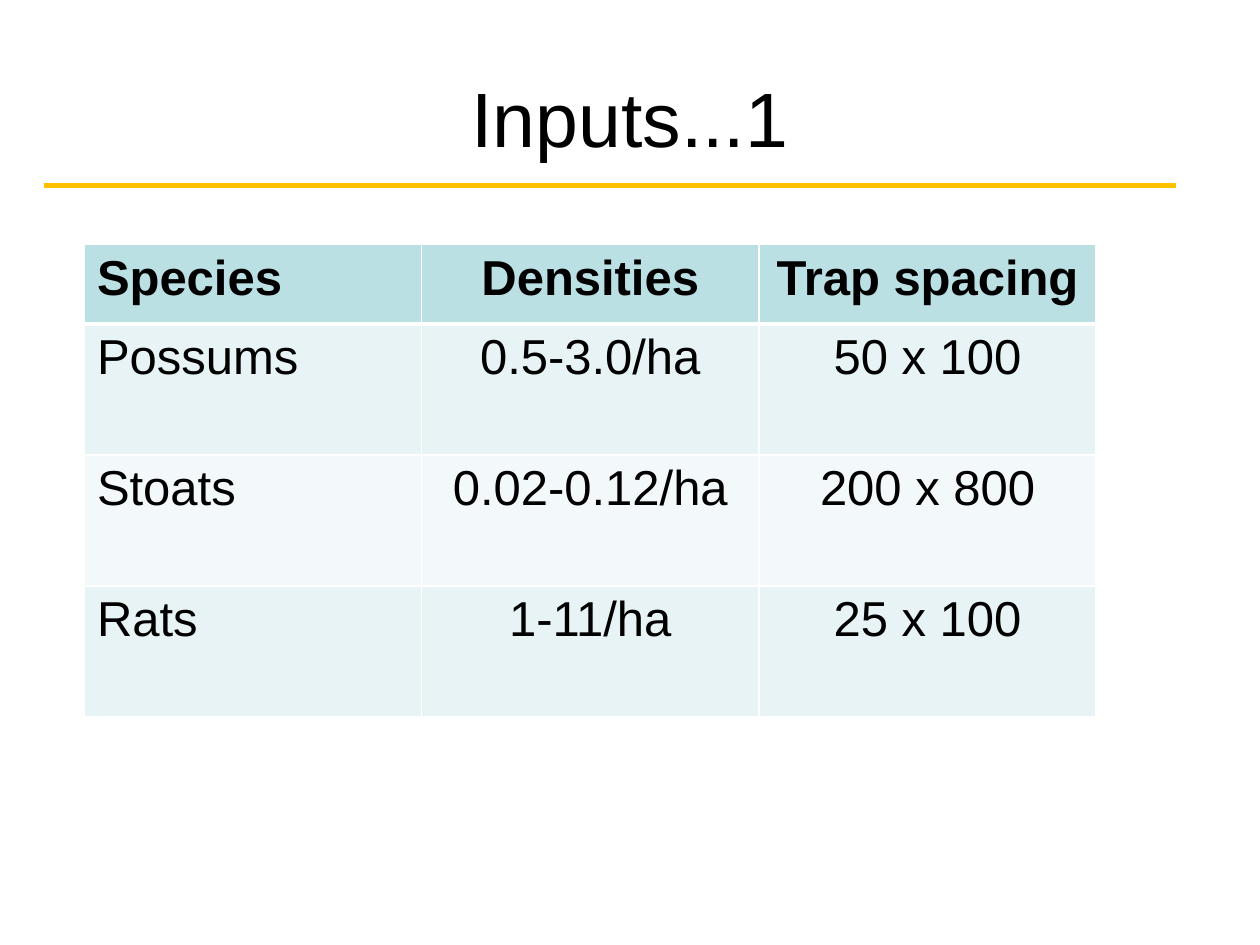
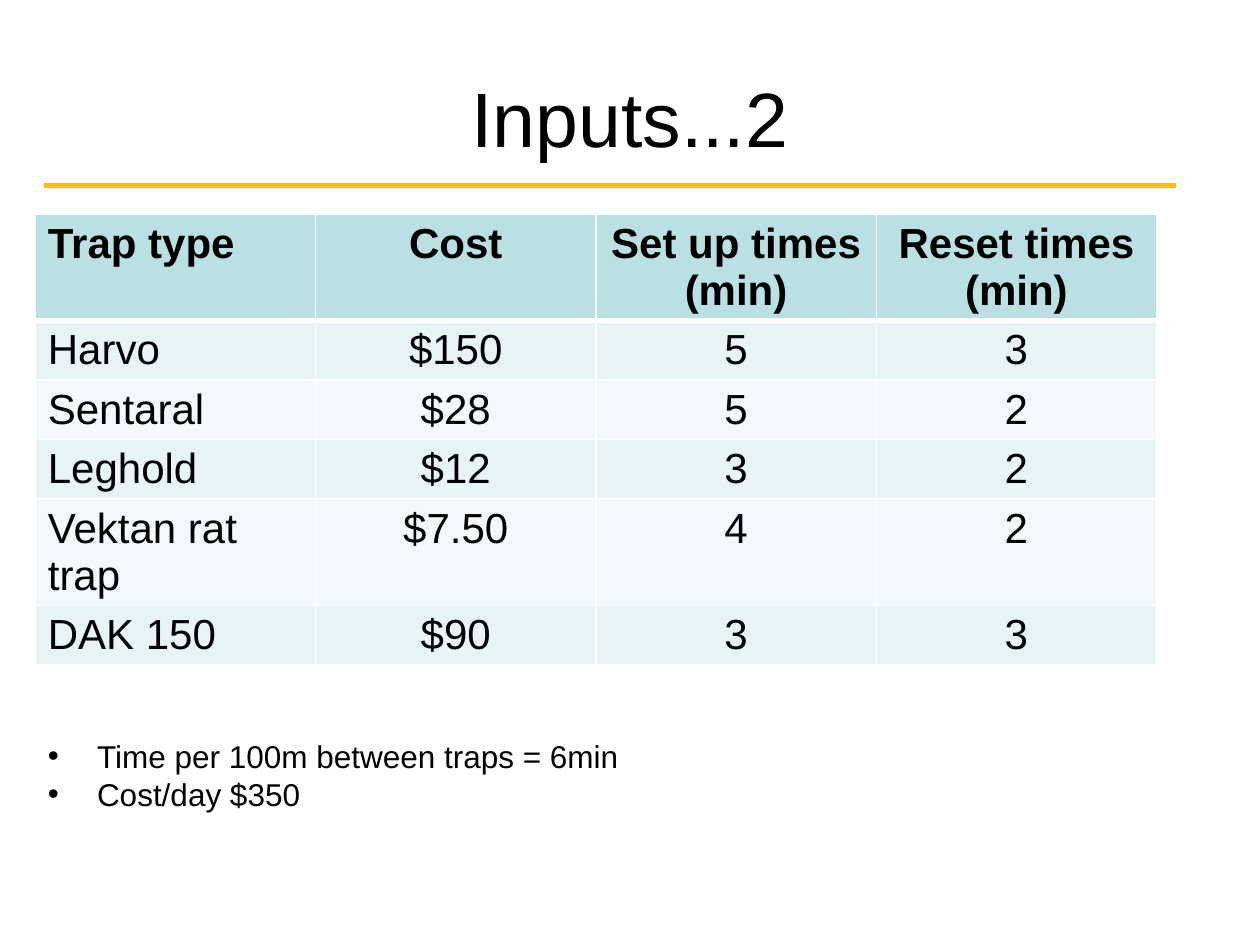
from lxml.etree import SubElement
from pptx import Presentation
from pptx.dml.color import RGBColor
from pptx.enum.shapes import MSO_CONNECTOR as Connector
from pptx.enum.text import MSO_ANCHOR as Anchor, MSO_AUTO_SIZE as AutoSize, PP_ALIGN as Align
from pptx.oxml.ns import qn
from pptx.util import Inches, Pt

COLORS = {
    "text": "000000",
    "rule": "FFC000",
    "border": "FFFFFF",
    "header": "BBE0E3",
    "odd_row": "E7F3F4",
    "even_row": "F3F9FA",
}
FONT = "Arial"
COLUMNS, ROWS = 100, 75
TITLE_AND_BODY, TITLE_ONLY = 1, 5

SPECIES = [
    ["Species", "Densities", "Trap spacing"],
    ["Possums", "0.5-3.0/ha", "50 x 100"],
    ["Stoats", "0.02-0.12/ha", "200 x 800"],
    ["Rats", "1-11/ha", "25 x 100"],
]
TRAPS = [
    ["Trap type", "Cost", "Set up times (min)", "Reset times (min)"],
    ["Harvo", "$150", "5", "3"],
    ["Sentaral", "$28", "5", "2"],
    ["Leghold", "$12", "3", "2"],
    ["Vektan rat trap", "$7.50", "4", "2"],
    ["DAK 150", "$90", "3", "3"],
]
FIELD_COSTS = ["Time per 100m between traps = 6min", "Cost/day $350"]


class Deck:
    """Builds slides in one style on a grid of 100 columns by 75 rows."""

    def __init__(self):
        self.presentation = Presentation()
        self.presentation.slide_width = Inches(10)
        self.presentation.slide_height = Inches(7.5)
        self.slide = None

    def x(self, columns):
        return round(self.presentation.slide_width * columns / COLUMNS)

    def y(self, rows):
        return round(self.presentation.slide_height * rows / ROWS)

    def place(self, shape, left, top, width, height):
        shape.left, shape.top = self.x(left), self.y(top)
        shape.width, shape.height = self.x(width), self.y(height)

    def style(self, paragraph, size, align, bold=False):
        paragraph.alignment = align
        font = paragraph.font
        font.name, font.size, font.bold = FONT, Pt(size), bold
        font.color.rgb = RGBColor.from_string(COLORS["text"])

    def add_slide(self, title, layout):
        layouts = self.presentation.slide_layouts
        self.slide = self.presentation.slides.add_slide(layouts[layout])
        heading = self.slide.shapes.title
        self.place(heading, 5, 3, 90, 12.5)
        heading.text_frame.text = title
        heading.text_frame.vertical_anchor = Anchor.MIDDLE
        self.style(heading.text_frame.paragraphs[0], 44, Align.CENTER)
        self.add_rule(3.5, 93.3, 14.7)

    def add_rule(self, start, end, row):
        rule = self.slide.shapes.add_connector(
            Connector.STRAIGHT, self.x(start), self.y(row), self.x(end), self.y(row))
        rule.line.color.rgb = RGBColor.from_string(COLORS["rule"])
        rule.line.width = Pt(3)
        SubElement(rule._element.spPr, qn("a:effectLst"))

    def add_borders(self, cell, top, bottom):
        properties = cell._tc.get_or_add_tcPr()
        for side, width in {"L": 1, "R": 1, "T": top, "B": bottom}.items():
            line = SubElement(properties, qn(f"a:ln{side}"), w=str(Pt(width)))
            fill = SubElement(line, qn("a:solidFill"))
            SubElement(fill, qn("a:srgbClr"), val=COLORS["border"])

    def add_table(self, records, left, top, width, header_height, row_height, size):
        heights = [header_height] + [row_height] * (len(records) - 1)
        column_count = len(records[0])
        table = self.slide.shapes.add_table(
            len(records), column_count, self.x(left), self.y(top),
            self.x(width), self.y(sum(heights))).table
        for column in table.columns:
            column.width = self.x(width / column_count)
        for row_index, record in enumerate(records):
            table.rows[row_index].height = self.y(heights[row_index])
            is_header = row_index == 0
            band = "header" if is_header else "odd_row" if row_index % 2 else "even_row"
            for column_index, text in enumerate(record):
                cell = table.cell(row_index, column_index)
                cell.text = text
                align = Align.CENTER if column_index else Align.LEFT
                self.style(cell.text_frame.paragraphs[0], size, align, is_header)
                self.add_borders(cell, 3 if row_index == 1 else 1, 3 if is_header else 1)
                cell.fill.solid()
                cell.fill.fore_color.rgb = RGBColor.from_string(COLORS[band])

    def add_list(self, items, left, top, width, height, size):
        body = self.slide.placeholders[1]
        self.place(body, left, top, width, height)
        frame = body.text_frame
        frame.text = "\n".join(items)
        frame.auto_size = AutoSize.NONE
        indent = self.x(3.9)
        for paragraph in frame.paragraphs:
            paragraph.space_before = Pt(0)
            properties = paragraph._p.get_or_add_pPr()
            properties.set("marL", str(indent))
            properties.set("indent", str(-indent))
            SubElement(properties, qn("a:buFont"), typeface=FONT)
            SubElement(properties, qn("a:buChar"), char="•")
            self.style(paragraph, size, Align.LEFT)


def main():
    deck = Deck()
    deck.add_slide("Inputs...1", TITLE_ONLY)
    deck.add_table(SPECIES, 6.7, 19.4, 80.3, 6.3, 10.4, 28)
    deck.add_slide("Inputs...2", TITLE_AND_BODY)
    deck.add_table(TRAPS, 2.8, 17, 89, 8.4, 4.7, 24)
    deck.add_list(FIELD_COSTS, 2.8, 58, 89.8, 7.1, 18)
    deck.presentation.save("out.pptx")


if __name__ == "__main__":
    main()
